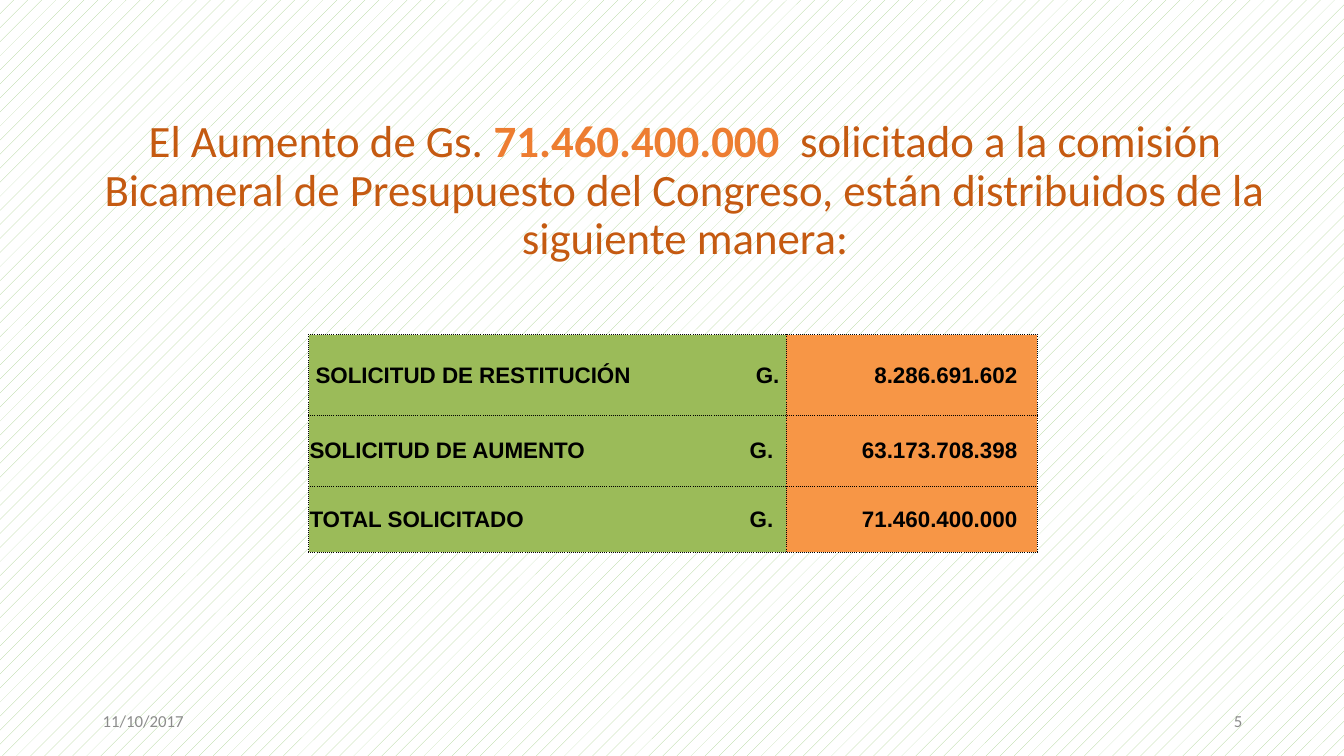
"""Build the slide on how the requested budget increase is distributed."""
import lxml.etree
import pptx
import pptx.dml.color
import pptx.enum.dml
import pptx.enum.text
import pptx.oxml
import pptx.oxml.ns
import pptx.util

Inches = pptx.util.Inches
Pt = pptx.util.Pt
ALIGN = pptx.enum.text.PP_ALIGN
MIDDLE = pptx.enum.text.MSO_ANCHOR.MIDDLE


def rgb(hex_code):
    return pptx.dml.color.RGBColor.from_string(hex_code)


def add_run(paragraph, text, color, **font_format):
    run = paragraph.add_run()
    run.text = text
    run.font.color.rgb = rgb(color)
    for name, value in font_format.items():
        setattr(run.font, name, value)


deck = pptx.Presentation()
deck.slide_width, deck.slide_height = Inches(13.33), Inches(7.5)
slide = deck.slides.add_slide(deck.slide_layouts[6])

background = slide.background.fill
background.patterned()
background.pattern = pptx.enum.dml.MSO_PATTERN.PERCENT_5
background.fore_color.rgb = rgb("A9D18E")
background.back_color.rgb = rgb("FFFFFF")

headline = slide.shapes.add_textbox(
    Inches(0.92), Inches(1.13), Inches(11.75), Inches(1.72)).text_frame
headline.word_wrap = True
sentence = headline.paragraphs[0]
sentence.alignment = ALIGN.CENTER
sentence.line_spacing = 0.9
for text, color, bold in [
    ("El Aumento de Gs. ", "C55A11", False),
    ("71.460.400.000 ", "ED7D31", True),
    (" solicitado a la comisión Bicameral de Presupuesto del Congreso, "
     "están distribuidos de la siguiente manera:", "C55A11", False),
]:
    add_run(sentence, text, color, name="Calibri", size=Pt(32), bold=bold)

for text, left, alignment in [
    ("11/10/2017", 0.92, ALIGN.LEFT),
    ("5", 9.42, ALIGN.RIGHT),
]:
    footer = slide.shapes.add_textbox(
        Inches(left), Inches(6.95), Inches(3), Inches(0.4)).text_frame
    footer.word_wrap = True
    footer.vertical_anchor = MIDDLE
    footer.paragraphs[0].alignment = alignment
    add_run(footer.paragraphs[0], text, "8C8C8C", name="Calibri", size=Pt(12))

requests = [
    ("SOLICITUD DE RESTITUCIÓN", "8.286.691.602", 0.8, 0.07),
    ("SOLICITUD DE AUMENTO", "63.173.708.398", 0.7, 0.01),
    ("TOTAL SOLICITADO", "71.460.400.000", 0.66, 0.01),
]
amounts = slide.shapes.add_table(
    len(requests), 2, Inches(3.06), Inches(3.32), Inches(7.23), Inches(2.16)).table
amounts.columns[0].width = Inches(4.74)
amounts.columns[1].width = Inches(2.49)

for row, (concept, amount, height, indent) in enumerate(requests):
    amounts.rows[row].height = Inches(height)
    for column, (text, fill, alignment, left, right) in enumerate([
        (f"{concept}\tG.", "9BBB59", ALIGN.LEFT, indent, 0.01),
        (amount, "F79646", ALIGN.RIGHT, 0.01, 0.2),
    ]):
        cell = amounts.cell(row, column)
        cell_format = {
            "vertical_anchor": MIDDLE,
            "margin_left": Inches(left),
            "margin_right": Inches(right),
            "margin_top": Inches(0.01),
            "margin_bottom": 0,
        }
        for name, value in cell_format.items():
            setattr(cell, name, value)

        properties = cell._tc.get_or_add_tcPr()
        for side in "LRTB":
            properties.append(pptx.oxml.parse_xml(
                f'<a:ln{side} {pptx.oxml.ns.nsdecls("a")} w="6350">'
                '<a:solidFill><a:srgbClr val="000000"/></a:solidFill>'
                f'<a:prstDash val="sysDot"/></a:ln{side}>'))
        cell.fill.solid()
        cell.fill.fore_color.rgb = rgb(fill)

        entry = cell.text_frame.paragraphs[0]
        entry.alignment = alignment
        if column == 0:
            tabs = lxml.etree.SubElement(
                entry._p.get_or_add_pPr(), pptx.oxml.ns.qn("a:tabLst"))
            lxml.etree.SubElement(
                tabs, pptx.oxml.ns.qn("a:tab"), pos=str(Inches(4.6)), algn="r")
        add_run(entry, text, "000000", name="Arial", size=Pt(16), bold=True)

deck.save("out.pptx")
